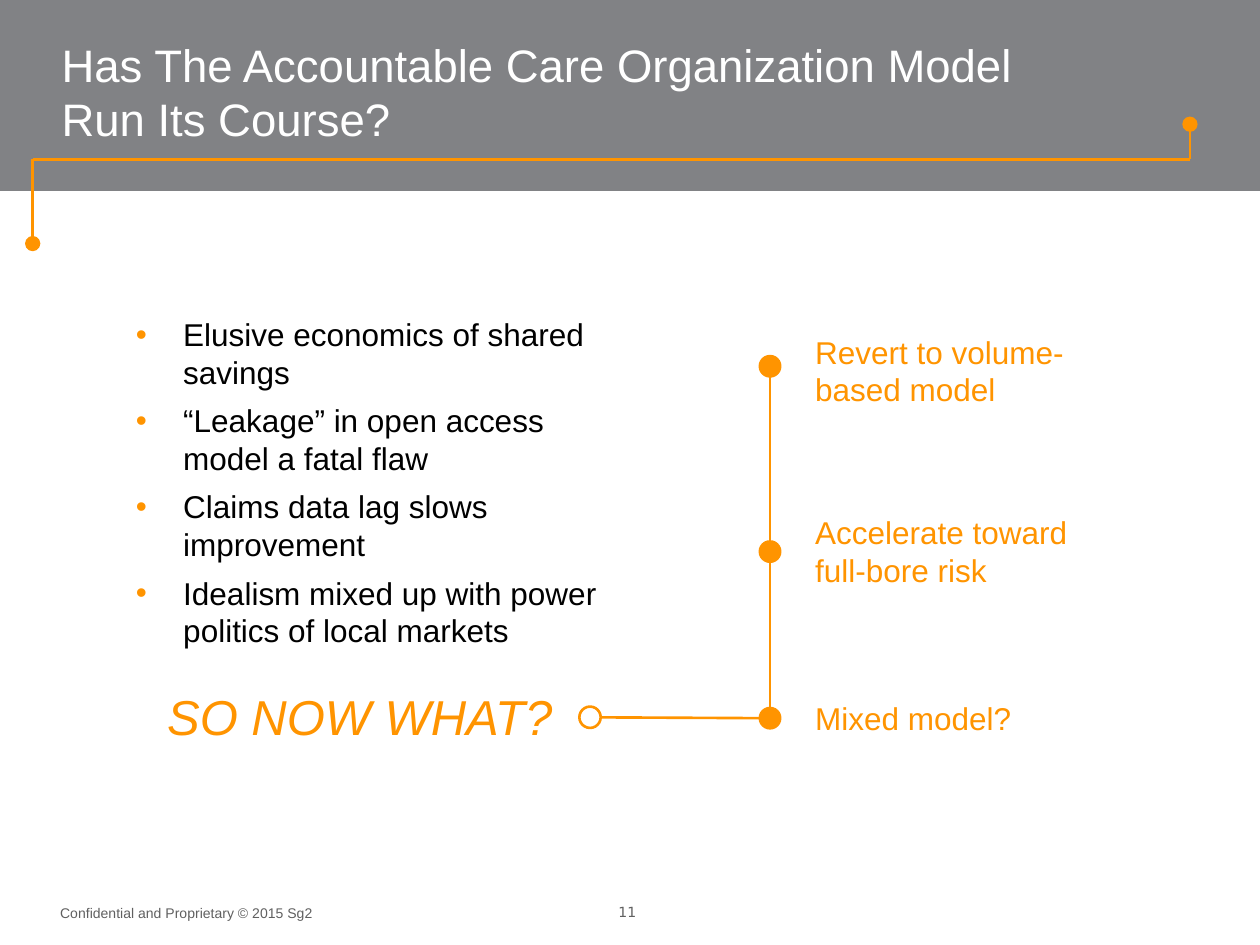
from lxml import etree
from pptx import Presentation
from pptx.dml.color import RGBColor
from pptx.enum.shapes import MSO_CONNECTOR, MSO_SHAPE
from pptx.enum.text import MSO_ANCHOR, MSO_AUTO_SIZE, PP_ALIGN
from pptx.oxml.ns import qn
from pptx.util import Pt

RECT, OVAL = MSO_SHAPE.RECTANGLE, MSO_SHAPE.OVAL
STRAIGHT = MSO_CONNECTOR.STRAIGHT
TOP, BOTTOM = MSO_ANCHOR.TOP, MSO_ANCHOR.BOTTOM
LEFT, CENTER = PP_ALIGN.LEFT, PP_ALIGN.CENTER
NO_FIT = MSO_AUTO_SIZE.NONE

COLORS = {"orange": "FF9400", "band": "818285", "white": "FFFFFF",
          "black": "000000", "footer": "606060"}
TITLE = "Has The Accountable Care Organization Model\vRun Its Course?"
BULLETS = [
    "Elusive economics of shared savings",
    "“Leakage” in open access model a fatal flaw",
    "Claims data lag slows improvement",
    "Idealism mixed up with power politics of local markets",
]
QUESTION = "SO NOW WHAT?"
FOOTER = "Confidential and Proprietary © 2015 Sg2"
PAGE = "11"

# text, label top, label height, dot centre
OPTIONS = [
    ("Revert to volume-based model", 186.5, 51, 209.3),
    ("Accelerate toward full-bore risk", 289.5, 51, 315.2),
    ("Mixed model?", 396, 29, 410.4),
]
STEM_X, LABEL_X, LABEL_W, DOT = 440, 458.7, 192, 11.6
OPEN_DOT = (337.2, 409.9)
HEADER_DOT, HEADER_ENDS = 7.2, [(680, 71), (18.7, 139.2)]
HEADER_Y = 91


def rgb(name):
    return RGBColor.from_string(COLORS[name])


def add_shape(s, kind, box, fill, line=None):
    sp = s.shapes.add_shape(kind, *map(Pt, box))
    sp.shadow.inherit = False
    sp.fill.solid()
    sp.fill.fore_color.rgb = rgb(fill)
    if line:
        sp.line.color.rgb = rgb(line)
        sp.line.width = Pt(1.5)
    else:
        sp.line.fill.background()
    return sp


def add_dot(s, x, y, size, fill="orange"):
    return add_shape(s, OVAL, (x - size / 2, y - size / 2, size, size), fill, "orange")


def add_line(s, start, end):
    cxn = s.shapes.add_connector(STRAIGHT, *map(Pt, (*start, *end)))
    cxn.line.color.rgb = rgb("orange")
    cxn.line.width = Pt(1.5)
    etree.SubElement(cxn._element.spPr, qn("a:effectLst"))


def place(sp, box):
    sp.left, sp.top, sp.width, sp.height = map(Pt, box)


def style(sp, size, color, align=LEFT, anchor=TOP, font="Arial", italic=False):
    tf = sp.text_frame
    tf.word_wrap = True
    tf.auto_size = NO_FIT
    tf.vertical_anchor = anchor
    for p in tf.paragraphs:
        p.alignment = align
        p.space_before = Pt(0)
        for r in p.runs:
            r.font.name, r.font.size, r.font.italic = font, Pt(size), italic
            r.font.color.rgb = rgb(color)


def add_text(s, text, box, size, color, **options):
    sp = s.shapes.add_textbox(*map(Pt, box))
    sp.text_frame.text = text
    style(sp, size, color, **options)
    return sp


def add_bullet(p):
    pPr = p._p.get_or_add_pPr()
    pPr.set("marL", str(Pt(27)))
    pPr.set("indent", str(-Pt(27)))
    color = etree.SubElement(pPr, qn("a:buClr"))
    etree.SubElement(color, qn("a:srgbClr"), val=COLORS["orange"])
    etree.SubElement(pPr, qn("a:buFont"), typeface="Arial")
    etree.SubElement(pPr, qn("a:buChar"), char="•")
    p.space_after = Pt(6)


def add_header(s):
    add_shape(s, RECT, (0, 0, 720, 109.2), "band")
    (right, upper), (left, lower) = HEADER_ENDS
    corners = [(right, upper), (right, HEADER_Y), (left, HEADER_Y), (left, lower)]
    for start, end in zip(corners, corners[1:]):
        add_line(s, start, end)
    for x, y in HEADER_ENDS:
        add_dot(s, x, y, HEADER_DOT)
    title = s.shapes.title
    title.text_frame.text = TITLE
    place(title, (28, 11.5, 655, 75.5))
    style(title, 26, "white", anchor=BOTTOM)
    s.shapes._spTree.append(title._element)


def add_reasons(s):
    body = s.placeholders[1]
    place(body, (70.5, 176.5, 281.5, 227.5))
    body.text_frame.text = "\n".join(BULLETS)
    for p in body.text_frame.paragraphs:
        add_bullet(p)
    style(body, 18, "black")
    s.shapes._spTree.append(body._element)
    add_text(s, QUESTION, (49.7, 389, 311.8, 41), 28, "orange",
             align=CENTER, italic=True)


def add_options(s):
    first, last = OPTIONS[0][-1], OPTIONS[-1][-1]
    add_line(s, OPEN_DOT, (STEM_X, last))
    add_line(s, (STEM_X, first), (STEM_X, last))
    add_dot(s, *OPEN_DOT, 12.2, "white")
    for text, top, height, y in OPTIONS:
        add_text(s, text, (LABEL_X, top, LABEL_W, height), 18, "orange")
        add_dot(s, STEM_X, y, DOT)


def add_footer(s):
    add_text(s, PAGE, (344.5, 512.5, 28, 17.5), 8, "footer",
             align=CENTER, font="DejaVu Sans")
    sp = add_text(s, FOOTER, (27.3, 509, 304, 24.5), 8, "footer", anchor=BOTTOM)
    sp.text_frame.margin_top = sp.text_frame.margin_bottom = Pt(7.2)


def main():
    """Build the accountable care slide."""
    prs = Presentation()
    prs.slide_width, prs.slide_height = Pt(720), Pt(540)
    s = prs.slides.add_slide(prs.slide_layouts[1])
    add_header(s)
    add_reasons(s)
    add_options(s)
    add_footer(s)
    prs.save("out.pptx")


if __name__ == "__main__":
    main()
